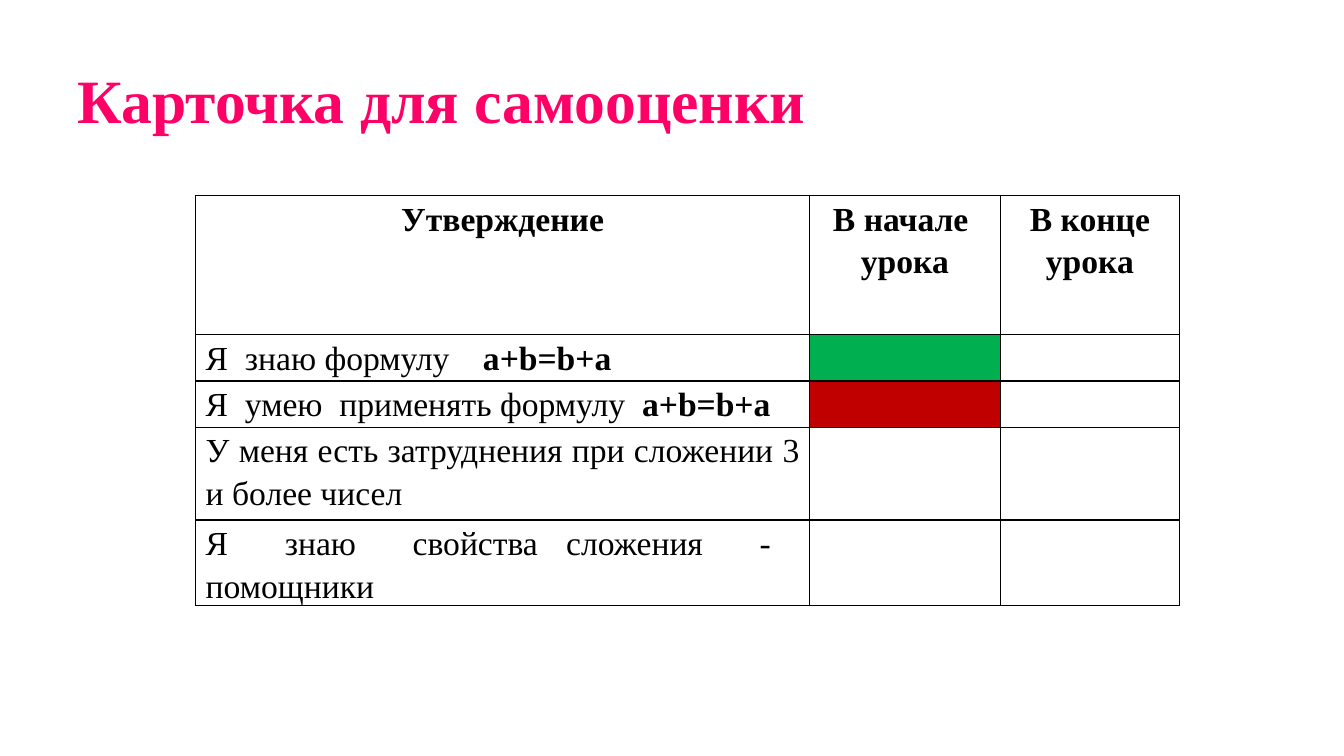
from lxml import etree
from pptx import Presentation
from pptx.dml.color import RGBColor
from pptx.enum import text
from pptx.oxml import ns
from pptx.util import Inches, Pt

FONT = "Times New Roman"
TITLE = "Карточка для самооценки"
HEADINGS = ["Утверждение", "В начале  урока", "В конце урока"]
FORMULA = "a+b=b+a"
# Each statement: plain text, bold text, fill of the "start of lesson" cell
STATEMENTS = [
    ("Я  знаю формулу\t", FORMULA, "00B050"),
    ("Я  умею  применять формулу  ", FORMULA, "C00000"),
    ("У меня есть затруднения при сложении 3 и более чисел", "", None),
    ("Я  знаю  свойства сложения  -  помощники", "", None),
]
COLUMN_WIDTHS = [6.09, 1.89, 1.78]
ROW_HEIGHTS = [1.38, 0.46, 0.46, 0.92, 0.85]
TABLE_LEFT, TABLE_TOP = 1.94, 1.94
FORMULA_TAB = 2.75


def color(value):
    return RGBColor.from_string(value)


def add_element(parent, tag, **attributes):
    return etree.SubElement(parent, ns.qn(tag), attributes)


def style_cell(cell, fill):
    """Set margins, black borders and the fill (None leaves the cell clear)."""
    cell.margin_left = cell.margin_right = Inches(0.1)
    cell.margin_top = cell.margin_bottom = 0
    properties = cell._tc.get_or_add_tcPr()
    for side in ("a:lnL", "a:lnR", "a:lnT", "a:lnB"):
        line = add_element(properties, side, w=str(Pt(1)))
        add_element(add_element(line, "a:solidFill"), "a:srgbClr", val="000000")
    if fill:
        cell.fill.solid()
        cell.fill.fore_color.rgb = color(fill)
    else:
        cell.fill.background()


def style_paragraph(paragraph, size, font_color, alignment, bold=None):
    paragraph.alignment = alignment
    paragraph.line_spacing = 1.15
    font = paragraph.font
    font.name, font.size, font.bold = FONT, Pt(size), bold
    font.color.rgb = color(font_color)


presentation = Presentation()
presentation.slide_width, presentation.slide_height = Inches(13.33), Inches(7.5)
slide = presentation.slides.add_slide(presentation.slide_layouts[5])

title = slide.shapes.title
title.left, title.top = Inches(0.67), Inches(0.3)
title.width, title.height = Inches(12), Inches(1.25)
title.text_frame.text = TITLE
title.text_frame.vertical_anchor = text.MSO_ANCHOR.MIDDLE
title_paragraph = title.text_frame.paragraphs[0]
style_paragraph(title_paragraph, 44, "FF0066", text.PP_ALIGN.LEFT, True)
title_paragraph.space_after = Pt(10)

table = slide.shapes.add_table(
    len(ROW_HEIGHTS), len(COLUMN_WIDTHS), Inches(TABLE_LEFT), Inches(TABLE_TOP),
    Inches(sum(COLUMN_WIDTHS)), Inches(sum(ROW_HEIGHTS))).table
table.first_row = table.horz_banding = False
for column, width in zip(table.columns, COLUMN_WIDTHS):
    column.width = Inches(width)
for row, height in zip(table.rows, ROW_HEIGHTS):
    row.height = Inches(height)

for column_index, heading in enumerate(HEADINGS):
    cell = table.cell(0, column_index)
    cell.text = heading
    style_cell(cell, None)
    style_paragraph(cell.text_frame.paragraphs[0], 24, "000000",
                    text.PP_ALIGN.CENTER, True)

for row_index, (plain, bold, start_fill) in enumerate(STATEMENTS, start=1):
    for column_index, fill in enumerate([None, start_fill, None]):
        style_cell(table.cell(row_index, column_index), fill)
    paragraph = table.cell(row_index, 0).text_frame.paragraphs[0]
    tabs = add_element(paragraph._p.get_or_add_pPr(), "a:tabLst")
    add_element(tabs, "a:tab", pos=str(Inches(FORMULA_TAB)), algn="l")
    style_paragraph(paragraph, 24, "000000", text.PP_ALIGN.JUSTIFY)
    paragraph.add_run().text = plain
    if bold:
        formula = paragraph.add_run()
        formula.text = bold
        formula.font.bold = True

presentation.save("out.pptx")
